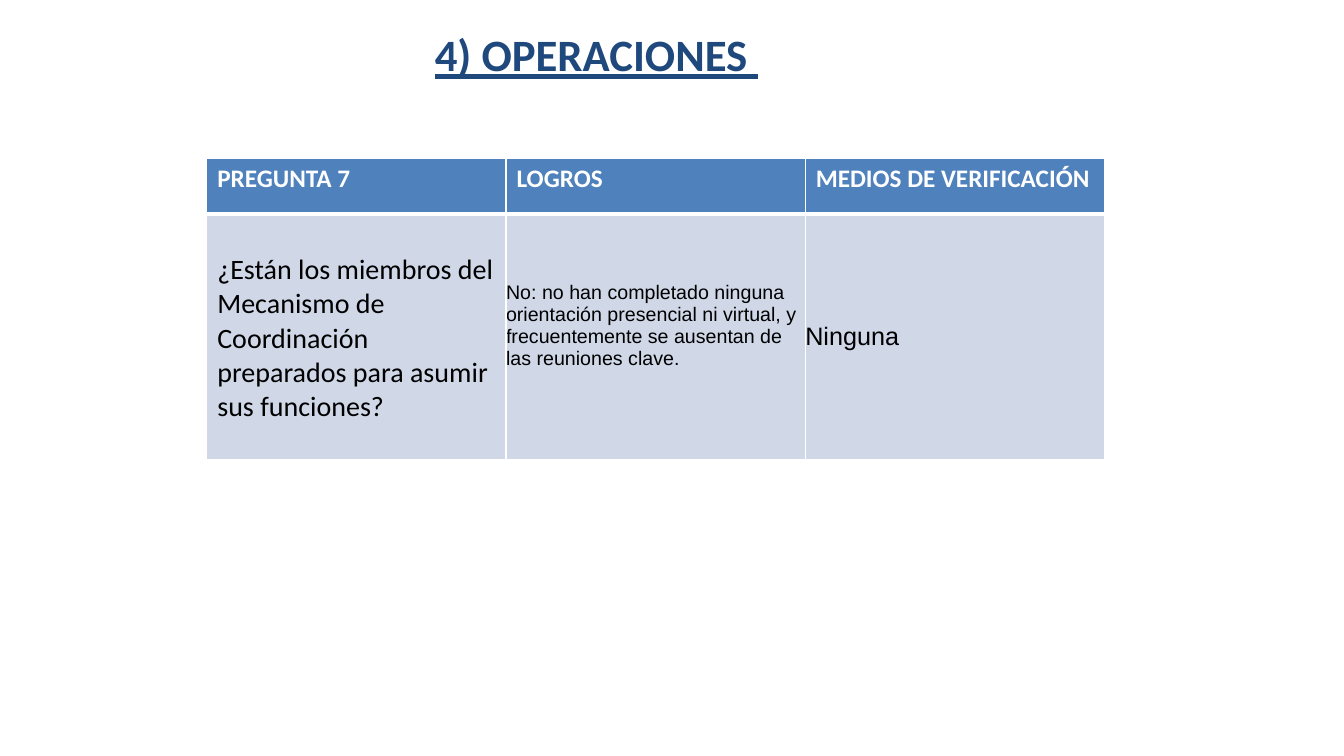
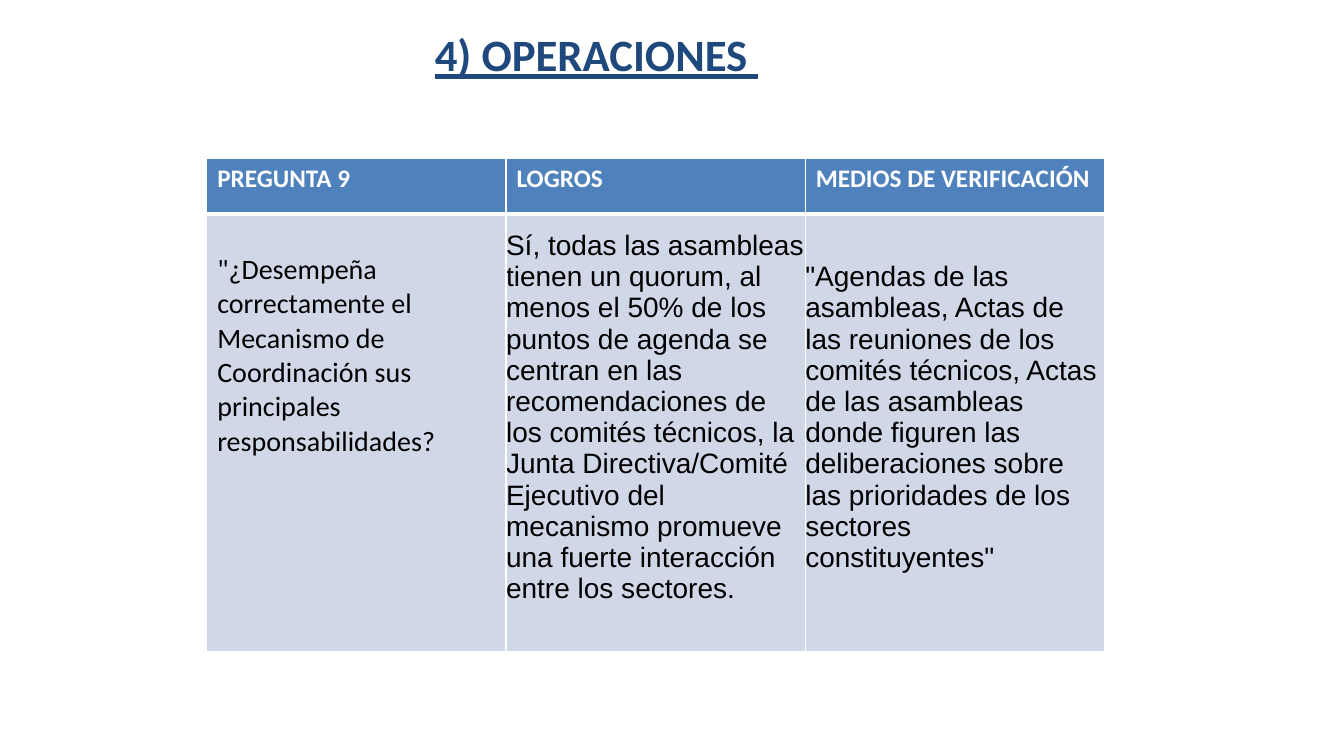
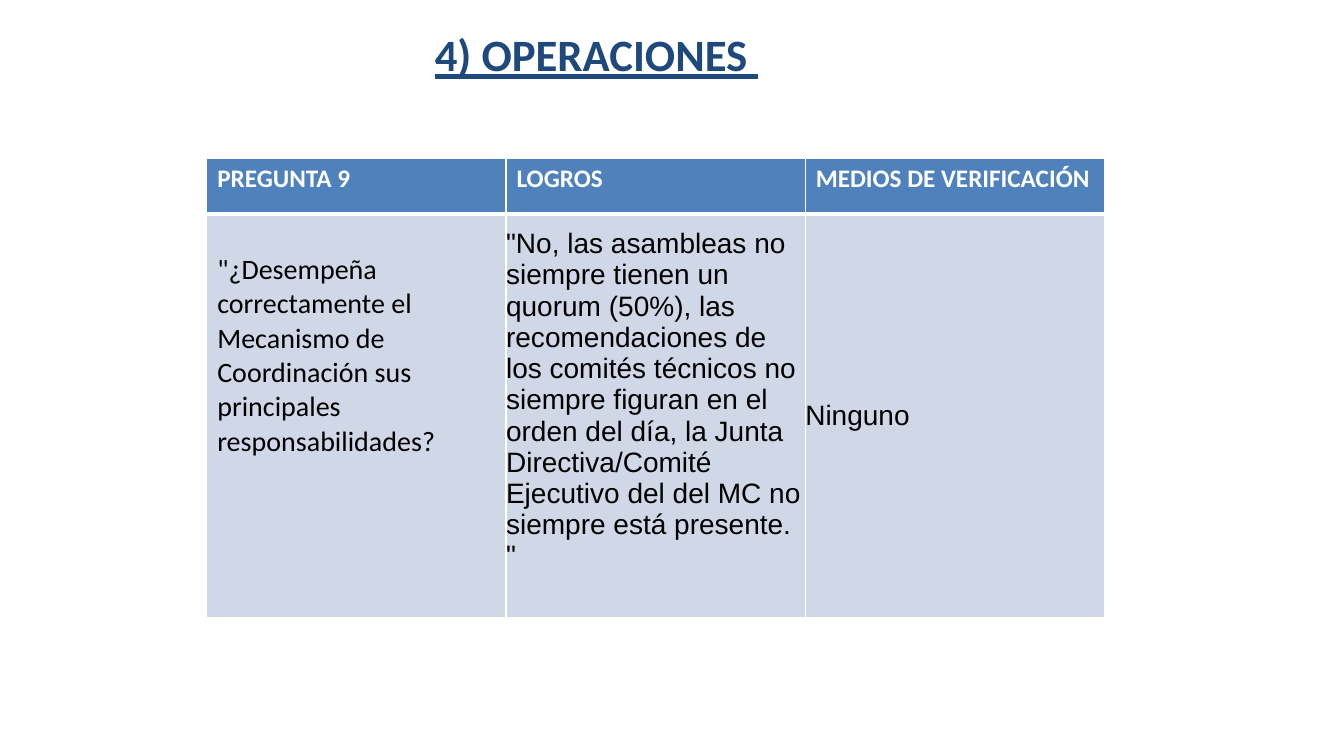
from dataclasses import dataclass

from lxml import etree
from pptx import Presentation
from pptx.dml.color import RGBColor
from pptx.enum.text import MSO_ANCHOR, MSO_AUTO_SIZE, PP_ALIGN
from pptx.oxml.ns import qn
from pptx.util import Pt

PX = 9525
TOP, MIDDLE = MSO_ANCHOR.TOP, MSO_ANCHOR.MIDDLE
LEFT, CENTER = PP_ALIGN.LEFT, PP_ALIGN.CENTER
NO_AUTOFIT = MSO_AUTO_SIZE.NONE
TITLE_ONLY = 5


@dataclass(frozen=True)
class Theme:
    navy: str = "1F497D"
    blue: str = "4F81BD"
    pale: str = "D0D8E8"
    white: str = "FFFFFF"
    black: str = "000000"
    heading_font: str = "Calibri"
    answer_font: str = "Arial"
    title_size: int = 32
    header_size: int = 18
    body_size: int = 20
    medium_size: int = 18
    small_size: int = 14
    thin_rule: int = 1
    thick_rule: int = 3


THEME = Theme()

SLIDE_SIZE = (1280, 720)
TITLE_BOX = (239, 21, 658, 113)
TABLE_ORIGIN = (197, 151)
COLUMN_WIDTH = 285
HEADER_HEIGHT = 53
HEADER_INSETS = (10, 5, 10, 5)
QUESTION_INSETS = (10, 37, 10, 5)


@dataclass(frozen=True)
class Answer:
    """Answer text; `space_below` lifts it above the middle of its cell."""
    text: str
    size: int = THEME.body_size
    space_below: int = 0


@dataclass(frozen=True)
class Assessment:
    number: int
    question: str
    achievement: Answer
    evidence: Answer
    body_height: int


PREPARATION = ("¿Están los miembros del Mecanismo de Coordinación preparados "
               "para asumir sus funciones?")
PERFORMANCE = ('"¿Desempeña correctamente el Mecanismo de Coordinación sus '
               'principales responsabilidades?')

ASSESSMENTS = [
    Assessment(
        7, PREPARATION,
        Answer("No: no han completado ninguna orientación presencial ni virtual, "
               "y frecuentemente se ausentan de las reuniones clave.",
               THEME.small_size, 21),
        Answer("Ninguna", THEME.medium_size), 234),
    Assessment(
        9, PERFORMANCE,
        Answer("Sí, todas las asambleas tienen un quorum, al menos el 50% de los "
               "puntos de agenda se centran en las recomendaciones de los comités "
               "técnicos, la Junta Directiva/Comité Ejecutivo del mecanismo "
               "promueve una fuerte interacción entre los sectores.",
               space_below=30),
        Answer('"Agendas de las asambleas, Actas de las reuniones de los comités '
               'técnicos, Actas de las asambleas donde figuren las deliberaciones '
               'sobre las prioridades de los sectores constituyentes"',
               space_below=30), 417),
    Assessment(
        9, PERFORMANCE,
        Answer('"No, las asambleas no siempre tienen un quorum (50%), las '
               'recomendaciones de los comités técnicos no siempre figuran en el '
               'orden del día, la Junta Directiva/Comité Ejecutivo del del MC no '
               'siempre está presente. "', space_below=30),
        Answer("Ninguno"), 384),
]


def style_paragraph(paragraph, font, size, color, bold=False, align=LEFT):
    paragraph.alignment = align
    paragraph.font.name = font
    paragraph.font.size = Pt(size)
    paragraph.font.bold = bold
    paragraph.font.color.rgb = RGBColor.from_string(color)


def set_borders(cell, **widths):
    """Draw white rules; keys are the sides L, R, T and B, in that order."""
    properties = cell._tc.get_or_add_tcPr()
    for side, width in widths.items():
        line = etree.SubElement(properties, qn(f"a:ln{side}"), w=str(Pt(width)))
        fill = etree.SubElement(line, qn("a:solidFill"))
        etree.SubElement(fill, qn("a:srgbClr"), val=THEME.white)


def fill_cell(cell, text, fill, insets, anchor, **text_style):
    cell.fill.solid()
    cell.fill.fore_color.rgb = RGBColor.from_string(fill)
    (cell.margin_left, cell.margin_top,
     cell.margin_right, cell.margin_bottom) = (inset * PX for inset in insets)
    cell.vertical_anchor = anchor
    cell.text = text
    style_paragraph(cell.text_frame.paragraphs[0], **text_style)


def add_title(slide, text, box):
    title = slide.shapes.title
    title.left, title.top, title.width, title.height = (side * PX for side in box)
    frame = title.text_frame
    frame.word_wrap = True
    frame.auto_size = NO_AUTOFIT
    frame.vertical_anchor = TOP
    frame.text = text
    heading = frame.paragraphs[0]
    style_paragraph(heading, THEME.heading_font, THEME.title_size, THEME.navy,
                    bold=True, align=CENTER)
    heading.font.underline = True


def add_assessment_table(slide, assessment, origin):
    headers = (f"PREGUNTA {assessment.number}", "LOGROS", "MEDIOS DE VERIFICACIÓN")
    heights = (HEADER_HEIGHT, assessment.body_height)
    left, top = origin
    table = slide.shapes.add_table(
        len(heights), len(headers), left * PX, top * PX,
        len(headers) * COLUMN_WIDTH * PX, sum(heights) * PX).table
    for row, height in zip(table.rows, heights):
        row.height = height * PX
    thin, thick = THEME.thin_rule, THEME.thick_rule
    for column, header in enumerate(headers):
        table.columns[column].width = COLUMN_WIDTH * PX
        set_borders(table.cell(0, column), L=thin, R=thin, T=thin, B=thick)
        set_borders(table.cell(1, column), L=thin, R=thin, T=thick, B=thin)
        fill_cell(table.cell(0, column), header, THEME.blue, HEADER_INSETS, TOP,
                  font=THEME.heading_font, size=THEME.header_size,
                  color=THEME.white, bold=True)

    fill_cell(table.cell(1, 0), assessment.question, THEME.pale, QUESTION_INSETS,
              TOP, font=THEME.heading_font, size=THEME.body_size,
              color=THEME.black)
    answers = (assessment.achievement, assessment.evidence)
    for column, answer in enumerate(answers, start=1):
        fill_cell(table.cell(1, column), answer.text, THEME.pale,
                  (0, 0, 0, answer.space_below), MIDDLE,
                  font=THEME.answer_font, size=answer.size, color=THEME.black)


def add_assessment_slide(deck, assessment):
    slide = deck.slides.add_slide(deck.slide_layouts[TITLE_ONLY])
    add_title(slide, "4) OPERACIONES ", TITLE_BOX)
    add_assessment_table(slide, assessment, TABLE_ORIGIN)


def main():
    deck = Presentation()
    deck.slide_width, deck.slide_height = (side * PX for side in SLIDE_SIZE)
    for assessment in ASSESSMENTS:
        add_assessment_slide(deck, assessment)
    deck.save("out.pptx")


if __name__ == "__main__":
    main()
